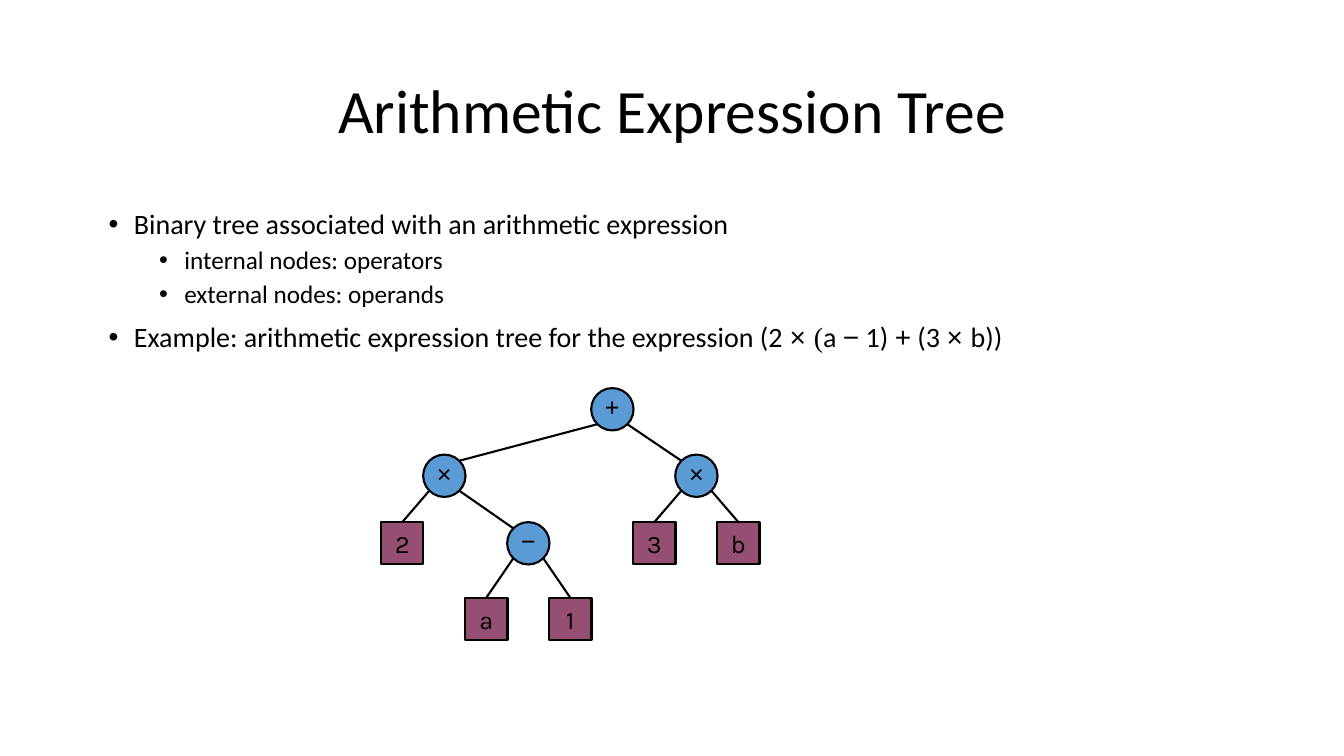
from dataclasses import dataclass
from math import sqrt
from typing import Optional

from lxml import etree
from pptx import Presentation
from pptx.dml.color import RGBColor
from pptx.enum.shapes import MSO_CONNECTOR, MSO_SHAPE
from pptx.enum.text import MSO_ANCHOR, PP_ALIGN
from pptx.oxml.ns import qn
from pptx.util import Inches, Pt

CIRCLE, SQUARE = MSO_SHAPE.OVAL, MSO_SHAPE.RECTANGLE
STRAIGHT = MSO_CONNECTOR.STRAIGHT
CENTER, MIDDLE = PP_ALIGN.CENTER, MSO_ANCHOR.MIDDLE


@dataclass(frozen=True)
class Theme:
    ink: RGBColor = RGBColor(0, 0, 0)
    operator_fill: RGBColor = RGBColor(0x5B, 0x9B, 0xD5)
    operand_fill: RGBColor = RGBColor(0x95, 0x4F, 0x72)
    text_font: str = "Calibri"
    symbol_font: str = "Arial"
    bracket_font: str = "Times New Roman"
    operand_font: str = "Karla"
    title_size: int = 44
    body_size: int = 20
    small_size: int = 18
    line_width: float = 1.5


@dataclass(frozen=True)
class Span:
    text: str
    font: str


@dataclass(frozen=True)
class Bullet:
    spans: tuple[Span, ...]
    level: int = 0


@dataclass(frozen=True)
class Node:
    symbol: str
    column: int
    row: int
    left: Optional["Node"] = None
    right: Optional["Node"] = None

    @property
    def is_operator(self) -> bool:
        return self.left is not None

    @property
    def center(self) -> tuple[float, float]:
        return TREE_LEFT + self.column * COLUMN_STEP + NODE_SIZE / 2, ROW_TOPS[self.row] + NODE_SIZE / 2


THEME = Theme()

# Tree grid, in inches
NODE_SIZE = 0.42
TREE_LEFT = 3.78
COLUMN_STEP = 5 / 12
ROW_TOPS = (3.85, 4.51, 5.18, 5.93)
DIAGONAL = NODE_SIZE / 2 / sqrt(2)

TEXT, SYMBOL = THEME.text_font, THEME.symbol_font
BULLETS = (
    Bullet((Span("Binary tree associated with an arithmetic expression", TEXT),)),
    Bullet((Span("internal nodes: operators", TEXT),), level=1),
    Bullet((Span("external nodes: operands", TEXT),), level=1),
    Bullet((
        Span("Example: arithmetic expression tree for the expression (2 ", TEXT),
        Span("× ", SYMBOL),
        Span("(", THEME.bracket_font),
        Span("a ", TEXT),
        Span("−", SYMBOL),
        Span(" 1) ", TEXT),
        Span("+", SYMBOL),
        Span(" (3 ", TEXT),
        Span("× ", SYMBOL),
        Span("b))", TEXT),
    )),
)

EXPRESSION = Node(
    "+", 5, 0,
    left=Node("×", 1, 1,
              left=Node("2", 0, 2),
              right=Node("−", 3, 2, left=Node("a", 2, 3), right=Node("1", 4, 3))),
    right=Node("×", 7, 1, left=Node("3", 6, 2), right=Node("b", 8, 2)),
)


def style_font(font, size: int, name: str) -> None:
    font.size, font.name = Pt(size), name
    font.color.rgb = THEME.ink


def add_title(page, text: str) -> None:
    box = page.shapes.add_textbox(Inches(0.92), Inches(0.4), Inches(11.5), Inches(1.45))
    frame = box.text_frame
    frame.word_wrap, frame.vertical_anchor = True, MIDDLE
    para = frame.paragraphs[0]
    para.text, para.alignment, para.line_spacing = text, CENTER, 0.9
    style_font(para.font, THEME.title_size, TEXT)


def set_bullet(para, indent: float) -> None:
    properties = para._p.get_or_add_pPr()
    properties.set("marL", str(Inches(indent)))
    properties.set("indent", str(Inches(-0.25)))
    etree.SubElement(properties, qn("a:buFont")).set("typeface", "Arial")
    etree.SubElement(properties, qn("a:buChar")).set("char", "•")


def add_bullets(page, bullets: tuple[Bullet, ...]) -> None:
    box = page.shapes.add_textbox(Inches(0.98), Inches(2.04), Inches(11.5), Inches(4.76))
    frame = box.text_frame
    frame.word_wrap = True
    for index, bullet in enumerate(bullets):
        para = frame.add_paragraph() if index else frame.paragraphs[0]
        para.level, para.line_spacing = bullet.level, 0.9
        para.space_before = Pt(5 if bullet.level else 10)
        set_bullet(para, 0.25 + 0.5 * bullet.level)
        style_font(para.font, THEME.small_size if bullet.level else THEME.body_size, TEXT)
        for span in bullet.spans:
            run = para.add_run()
            run.text = span.text
            style_font(run.font, THEME.small_size if bullet.level else THEME.body_size, span.font)


def add_edge(page, parent: Node, child: Node, side: int) -> None:
    """Join a parent to its left (side -1) or right (side 1) child."""
    (start_x, start_y), (end_x, end_y) = parent.center, child.center
    if child.is_operator:
        end_x, end_y = end_x - side * DIAGONAL, end_y - DIAGONAL
    else:
        end_y -= NODE_SIZE / 2
    edge = page.shapes.add_connector(
        STRAIGHT, Inches(start_x + side * DIAGONAL), Inches(start_y + DIAGONAL),
        Inches(end_x), Inches(end_y))
    edge.line.color.rgb, edge.line.width = THEME.ink, Pt(THEME.line_width)
    etree.SubElement(edge._element.spPr, qn("a:effectLst"))


def add_node(page, node: Node) -> None:
    x, y = node.center
    box = page.shapes.add_shape(
        CIRCLE if node.is_operator else SQUARE, Inches(x - NODE_SIZE / 2),
        Inches(y - NODE_SIZE / 2), Inches(NODE_SIZE), Inches(NODE_SIZE))
    box.shadow.inherit = False
    box.fill.solid()
    box.fill.fore_color.rgb = THEME.operator_fill if node.is_operator else THEME.operand_fill
    box.line.color.rgb, box.line.width = THEME.ink, Pt(THEME.line_width)
    frame = box.text_frame
    frame.word_wrap, frame.vertical_anchor = False, MIDDLE
    if node.is_operator:
        frame.margin_left = frame.margin_right = frame.margin_top = 0
        frame.margin_bottom = Inches(0.05)
    para = frame.paragraphs[0]
    para.text, para.alignment = node.symbol, CENTER
    style_font(para.font, THEME.small_size, SYMBOL if node.is_operator else THEME.operand_font)


def add_tree(page, node: Node) -> None:
    add_node(page, node)
    for child, side in ((node.left, -1), (node.right, 1)):
        if child is not None:
            add_edge(page, node, child, side)
            add_tree(page, child)


def main() -> None:
    deck = Presentation()
    deck.slide_width, deck.slide_height = Inches(13.33), Inches(7.5)
    page = deck.slides.add_slide(deck.slide_layouts[6])

    # Heading and explanation
    add_title(page, "Arithmetic Expression Tree")
    add_bullets(page, BULLETS)

    # Expression tree
    add_tree(page, EXPRESSION)
    deck.save("out.pptx")


if __name__ == "__main__":
    main()
